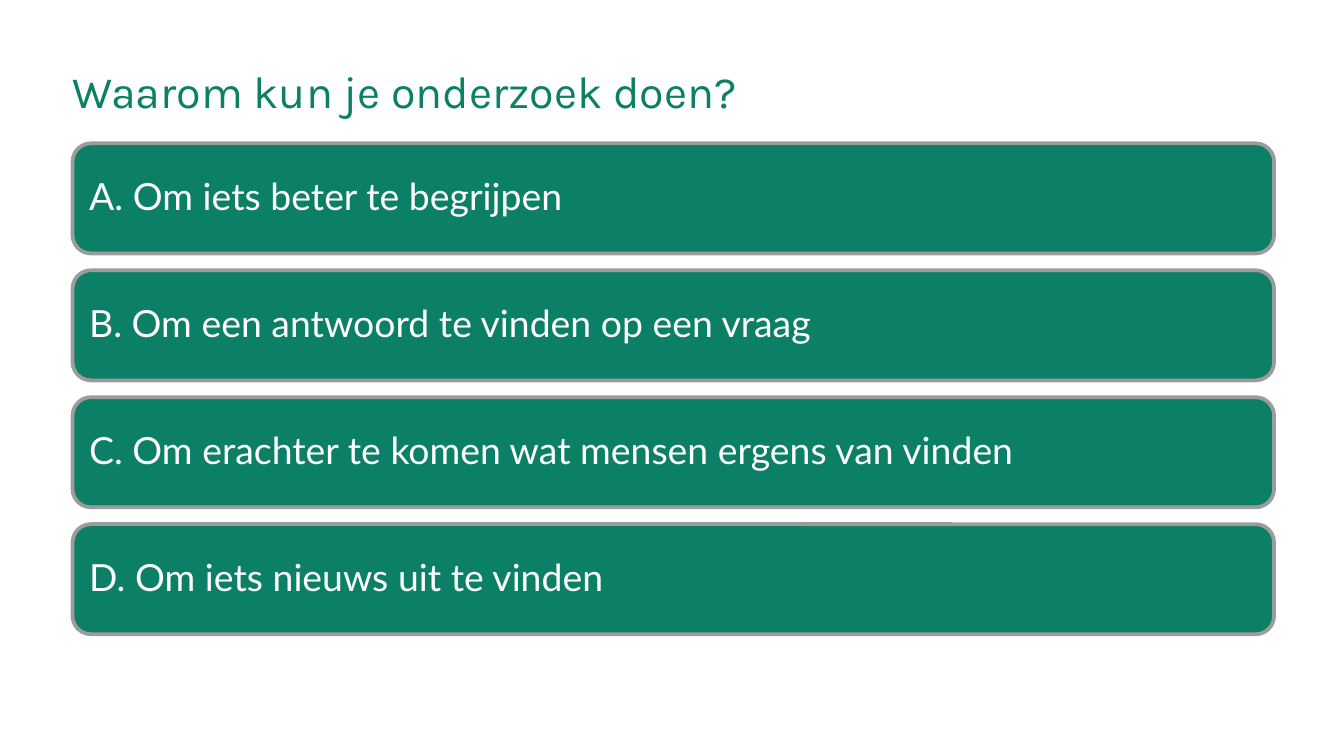
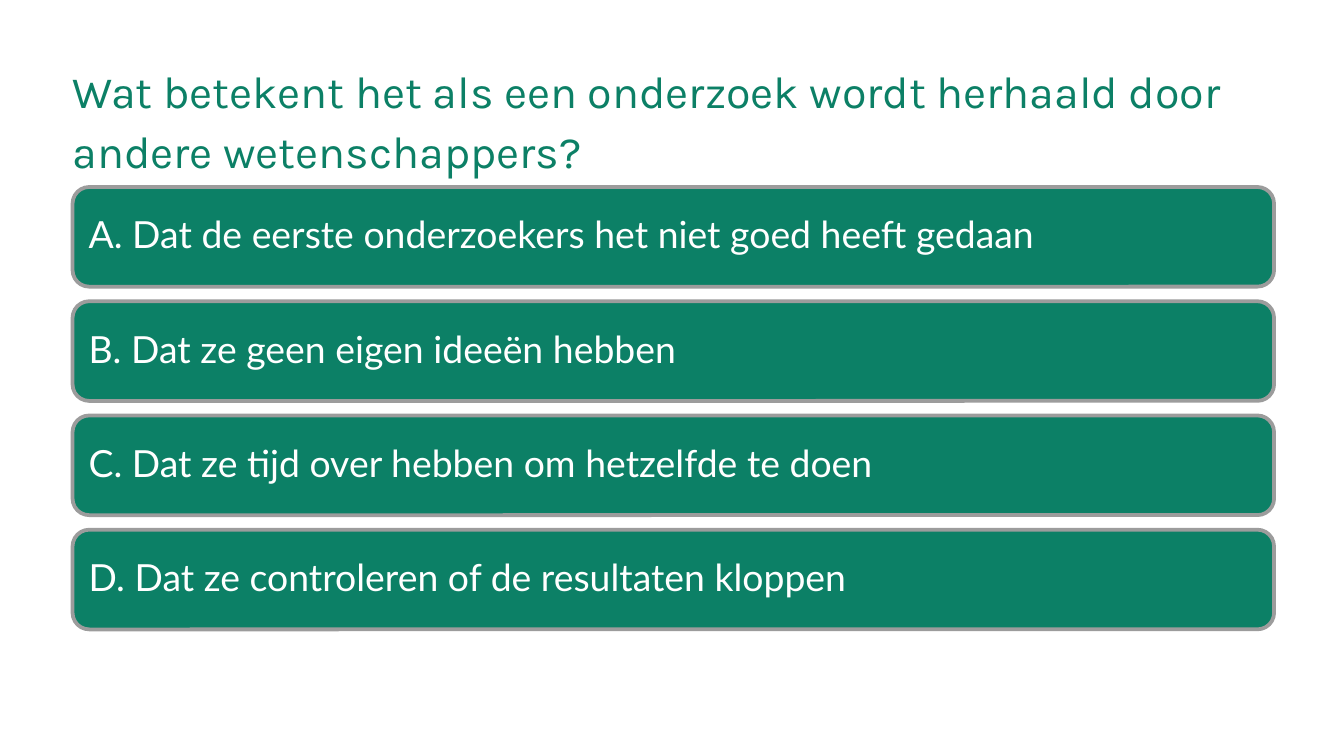
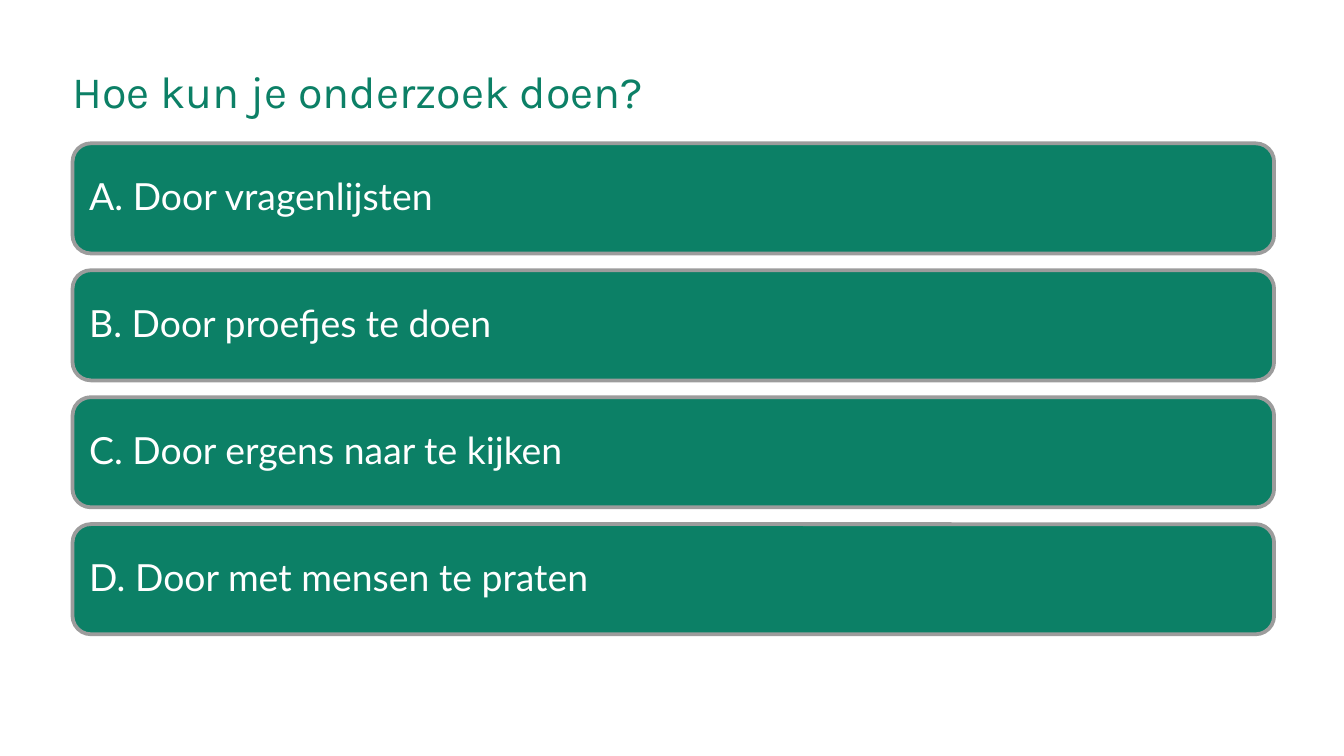
from dataclasses import dataclass

from pptx import Presentation
from pptx.dml.color import RGBColor
from pptx.enum import shapes, text
from pptx.slide import Slide
from pptx.text.text import TextFrame
from pptx.util import Length, Pt

COLORS = {"green": "0C8066", "grey": "9C9C9C", "white": "FFFFFF"}
LEFT = Pt(38.9)
WIDTH = Pt(643.7)
TITLE_TOP = Pt(31)
TITLE_HEIGHT = Pt(45.4)


@dataclass(frozen=True)
class TextStyle:
    font: str
    size: Length
    color: str
    line_spacing: float | Length
    inset: Length
    anchor: text.MSO_ANCHOR


@dataclass(frozen=True)
class AnswerStack:
    top: Length
    height: Length
    pitch: Length


@dataclass(frozen=True)
class Question:
    title: str
    answers: tuple[str, ...]
    stack: AnswerStack


TITLE = TextStyle("Karla", Pt(24), "green", Pt(32), Pt(0), text.MSO_ANCHOR.TOP)
ANSWER = TextStyle("Lato", Pt(20), "white", 0.9, Pt(6), text.MSO_ANCHOR.MIDDLE)

BELOW_ONE_LINE = AnswerStack(Pt(76.8), Pt(59), Pt(68))
BELOW_TWO_LINES = AnswerStack(Pt(100.2), Pt(53.4), Pt(61.2))

QUESTIONS = (
    Question(
        "Waarom kun je onderzoek doen?",
        (
            "Om iets beter te begrijpen",
            "Om een antwoord te vinden op een vraag",
            "Om erachter te komen wat mensen ergens van vinden",
            "Om iets nieuws uit te vinden",
        ),
        BELOW_ONE_LINE,
    ),
    Question(
        "Wat betekent het als een onderzoek wordt herhaald door andere wetenschappers?",
        (
            "Dat de eerste onderzoekers het niet goed heeft gedaan",
            "Dat ze geen eigen ideeën hebben",
            "Dat ze tijd over hebben om hetzelfde te doen",
            "Dat ze controleren of de resultaten kloppen",
        ),
        BELOW_TWO_LINES,
    ),
    Question(
        "Hoe kun je onderzoek doen?",
        (
            "Door vragenlijsten",
            "Door proefjes te doen",
            "Door ergens naar te kijken",
            "Door met mensen te praten",
        ),
        BELOW_ONE_LINE,
    ),
)


def rgb(name: str) -> RGBColor:
    return RGBColor.from_string(COLORS[name])


def write(frame: TextFrame, words: str, style: TextStyle) -> None:
    frame.word_wrap = True
    frame.vertical_anchor = style.anchor
    frame.margin_left = frame.margin_right = style.inset
    frame.margin_top = frame.margin_bottom = style.inset
    para = frame.paragraphs[0]
    para.alignment = text.PP_ALIGN.LEFT
    para.line_spacing = style.line_spacing
    span = para.add_run()
    span.text = words
    span.font.name = style.font
    span.font.size = style.size
    span.font.color.rgb = rgb(style.color)


def add_title(page: Slide, words: str) -> None:
    box = page.shapes.add_textbox(LEFT, TITLE_TOP, WIDTH, TITLE_HEIGHT)
    write(box.text_frame, words, TITLE)


def add_answer(page: Slide, words: str, top: Length, height: Length) -> None:
    box = page.shapes.add_shape(
        shapes.MSO_SHAPE.ROUNDED_RECTANGLE, LEFT, top, WIDTH, height
    )
    box.shadow.inherit = False
    box.fill.solid()
    box.fill.fore_color.rgb = rgb("green")
    box.line.color.rgb = rgb("grey")
    box.line.width = Pt(2)
    write(box.text_frame, words, ANSWER)


def add_question(page: Slide, question: Question) -> None:
    add_title(page, question.title)
    stack = question.stack
    for row, (letter, answer) in enumerate(zip("ABCD", question.answers)):
        top = Length(stack.top + row * stack.pitch)
        add_answer(page, f"{letter}. {answer}", top, stack.height)


def main() -> None:
    deck = Presentation()
    deck.slide_width = Pt(720)
    deck.slide_height = Pt(405)
    blank = deck.slide_layouts[6]
    for question in QUESTIONS:
        add_question(deck.slides.add_slide(blank), question)
    deck.save("out.pptx")


if __name__ == "__main__":
    main()
